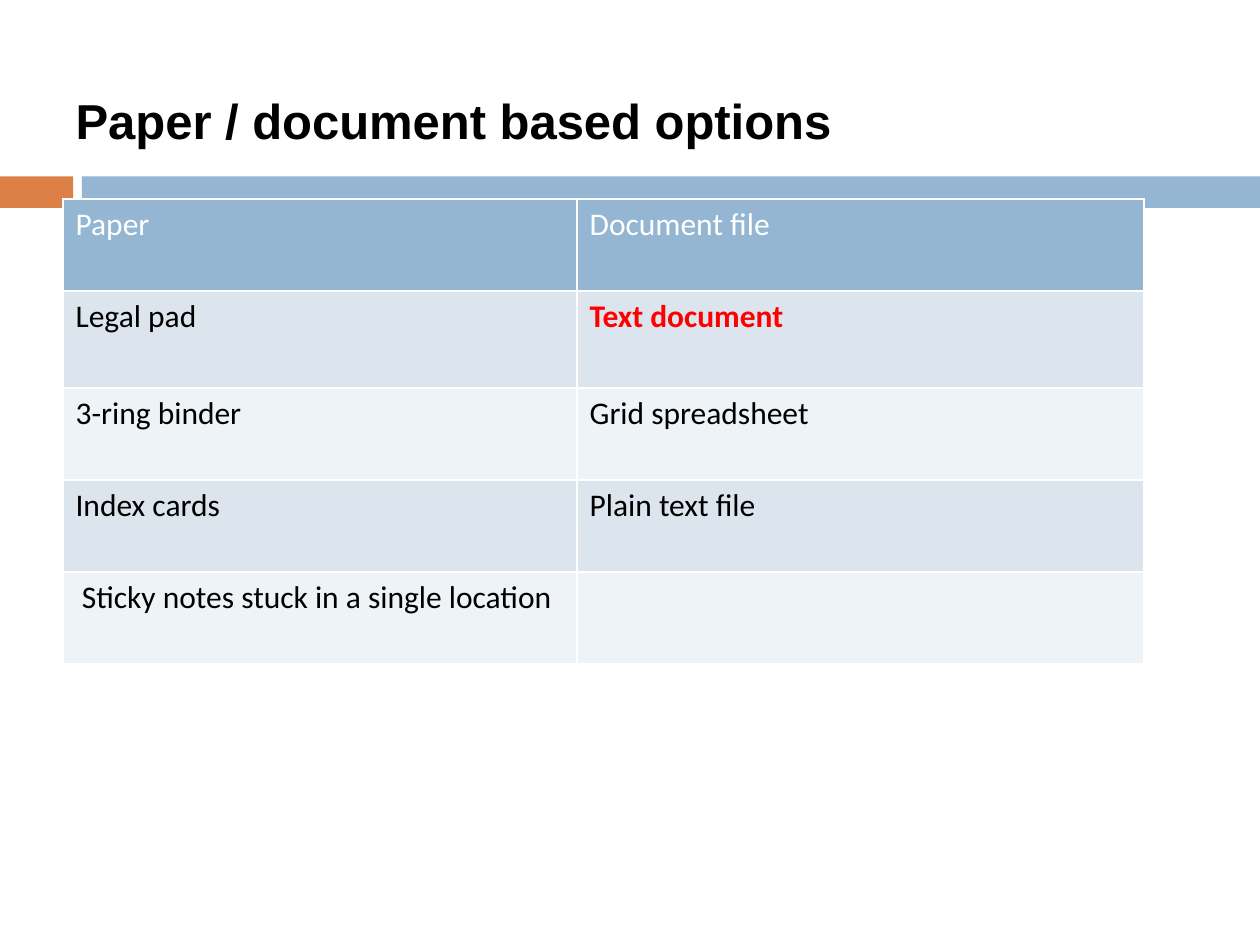
from dataclasses import dataclass

from lxml.etree import SubElement
from pptx import Presentation
from pptx.dml.color import RGBColor
from pptx.enum.shapes import MSO_SHAPE
from pptx.enum.text import MSO_ANCHOR, MSO_AUTO_SIZE, PP_ALIGN
from pptx.oxml.ns import qn
from pptx.util import Inches, Pt


@dataclass(frozen=True)
class Theme:
    accent: str = "DD8047"
    header: str = "94B6D2"
    bands: tuple = ("DCE5EE", "EEF3F7")
    white: str = "FFFFFF"
    text: str = "000000"
    highlight: str = "FF0000"
    title_font: str = "Arial"
    body_font: str = "Calibri"
    title_size: int = 28
    body_size: int = 18
    border_width: int = 1


def write_text(text_frame, text, *, font, size, color, bold=False):
    paragraph = text_frame.paragraphs[0]
    paragraph.alignment = PP_ALIGN.LEFT
    run = paragraph.add_run()
    run.text = text
    run.font.name = font
    run.font.size = Pt(size)
    run.font.bold = bold
    run.font.color.rgb = RGBColor.from_string(color)


def set_borders(cell, color, width):
    properties = cell._tc.get_or_add_tcPr()
    for position, side in enumerate(("lnL", "lnR", "lnT", "lnB")):
        line = SubElement(properties, qn(f"a:{side}"), w=str(Pt(width)))
        fill = SubElement(line, qn("a:solidFill"))
        SubElement(fill, qn("a:srgbClr"), val=color)
        properties.insert(position, line)  # borders come before the cell fill


class SlideBuilder:
    def __init__(self, slide, theme):
        self.slide = slide
        self.theme = theme

    def title(self, text, left, top, width, height):
        shape = self.slide.shapes.title
        shape.left, shape.top = Inches(left), Inches(top)
        shape.width, shape.height = Inches(width), Inches(height)
        frame = shape.text_frame
        frame.word_wrap = False
        frame.auto_size = MSO_AUTO_SIZE.SHAPE_TO_FIT_TEXT
        frame.vertical_anchor = MSO_ANCHOR.TOP
        write_text(frame, text, font=self.theme.title_font,
                   size=self.theme.title_size, color=self.theme.text, bold=True)

    def bar(self, left, top, width, height, color):
        shape = self.slide.shapes.add_shape(
            MSO_SHAPE.RECTANGLE, Inches(left), Inches(top), Inches(width), Inches(height))
        shape.shadow.inherit = False
        shape.fill.solid()
        shape.fill.fore_color.rgb = RGBColor.from_string(color)
        shape.line.fill.background()

    def table(self, rows, left, top, widths, heights, highlighted):
        theme = self.theme
        table = self.slide.shapes.add_table(
            len(rows), len(widths), Inches(left), Inches(top),
            Inches(sum(widths)), Inches(sum(heights))).table
        for column, width in zip(table.columns, widths):
            column.width = Inches(width)
        for index, (row, height) in enumerate(zip(rows, heights)):
            table.rows[index].height = Inches(height)
            is_header = index == 0
            fill = theme.header if is_header else theme.bands[(index - 1) % 2]
            for cell, text in zip(table.rows[index].cells, row):
                cell.fill.solid()
                cell.fill.fore_color.rgb = RGBColor.from_string(fill)
                set_borders(cell, theme.white, theme.border_width)
                if not text:
                    continue
                marked = text == highlighted
                color = theme.highlight if marked else theme.text
                write_text(cell.text_frame, text, font=theme.body_font,
                           size=theme.body_size, bold=marked,
                           color=theme.white if is_header else color)
        return table


def main():
    presentation = Presentation()
    presentation.slide_width, presentation.slide_height = Inches(10), Inches(7.5)
    theme = Theme()
    slide = presentation.slides.add_slide(presentation.slide_layouts[5])
    builder = SlideBuilder(slide, theme)

    # Divider band
    builder.bar(0, 1.4, 0.58, 0.25, theme.accent)
    builder.bar(0.65, 1.4, 9.35, 0.25, theme.header)

    # Options table
    options = [
        ("Paper", "Document file"),
        ("Legal pad", "Text document"),
        ("3-ring binder", "Grid spreadsheet"),
        ("Index cards", "Plain text file"),
        ("Sticky notes stuck in a single location", ""),
    ]
    table = builder.table(options, 0.5, 1.58, widths=(4.08, 4.5),
                          heights=(0.73, 0.77, 0.73, 0.73, 0.73),
                          highlighted="Text document")
    table.cell(4, 0).margin_left = Inches(0.15)

    # Title
    builder.title("Paper / document based options", 0.5, 0.67, 6.51, 0.57)

    presentation.save("out.pptx")


if __name__ == "__main__":
    main()
